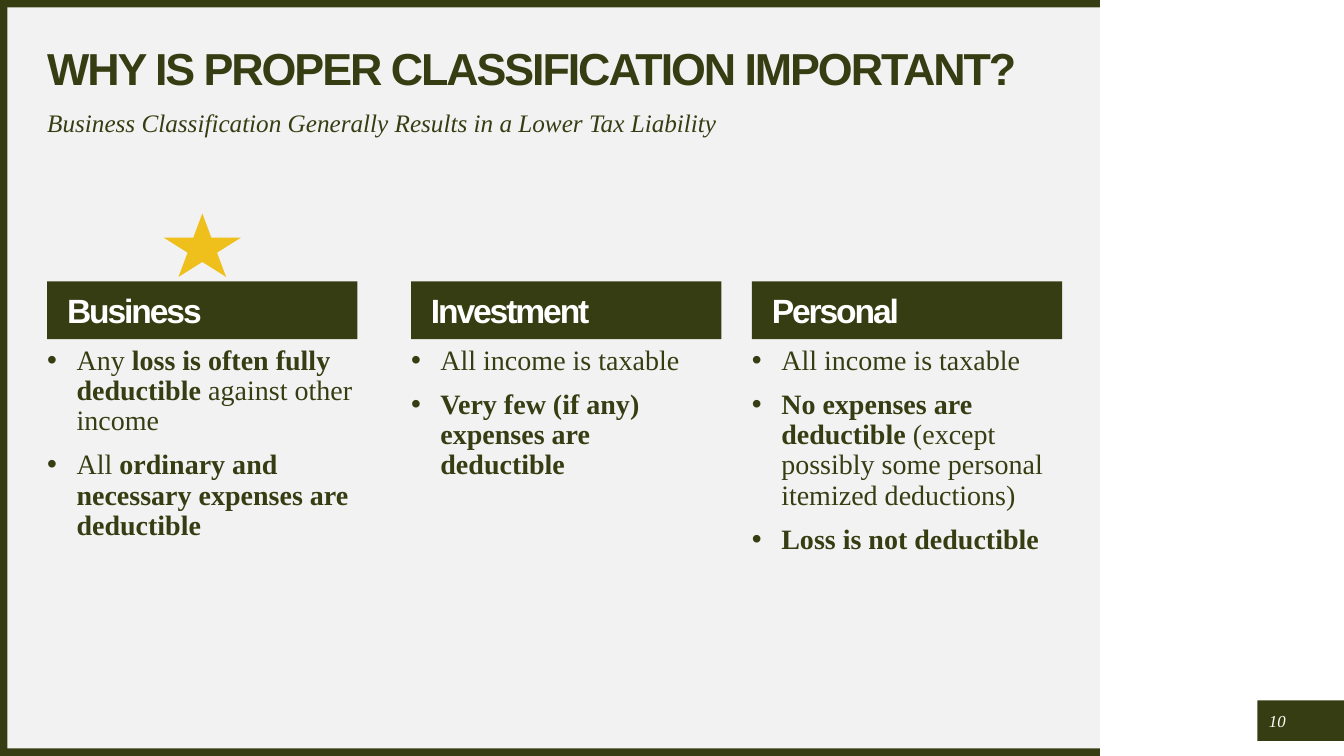
from lxml import etree
from pptx import Presentation
from pptx.dml.color import RGBColor
from pptx.enum.shapes import MSO_SHAPE
from pptx.enum.text import MSO_ANCHOR, PP_ALIGN
from pptx.oxml.ns import qn
from pptx.util import Cm, Pt

RECT, STAR = MSO_SHAPE.RECTANGLE, MSO_SHAPE.STAR_5_POINT
TOP, MIDDLE = MSO_ANCHOR.TOP, MSO_ANCHOR.MIDDLE
LEFT, CENTER = PP_ALIGN.LEFT, PP_ALIGN.CENTER
OLIVE, PANEL, GOLD, WHITE = "373D12", "F2F2F2", "EFBF1B", "FFFFFF"
SANS, SERIF = "Arial", "Times New Roman"
SLIDE_W, SLIDE_H = 33.87, 19.05
PANEL_W, EDGE = 27.72, 0.19
MARGIN, COLUMN_W = 1.19, 7.82

COLUMNS = [
    (MARGIN, "Business", [
        [("Any ", False), ("loss is often fully deductible ", True),
         ("against other income", False)],
        [("All ", False),
         ("ordinary and necessary expenses are deductible", True)],
    ]),
    (10.36, "Investment", [
        [("All income is taxable", False)],
        [("Very few (if any) expenses are deductible", True)],
    ]),
    (18.95, "Personal", [
        [("All income is taxable", False)],
        [("No expenses are deductible ", True),
         ("(except possibly some personal itemized deductions)", False)],
        [("Loss is not deductible", True)],
    ]),
]


def rgb(color):
    """Turn a hex string into a colour."""
    return RGBColor.from_string(color)


def add_block(s, kind, x, y, w, h, color):
    """Add a flat preset shape without an outline."""
    sp = s.shapes.add_shape(kind, Cm(x), Cm(y), Cm(w), Cm(h))
    sp.shadow.inherit = False
    sp.fill.solid()
    sp.fill.fore_color.rgb = rgb(color)
    sp.line.fill.background()
    return sp


def add_text(s, x, y, w, h):
    """Add an empty text box."""
    return s.shapes.add_textbox(Cm(x), Cm(y), Cm(w), Cm(h))


def set_frame(sp, anchor=TOP, left=0, top=0):
    """Set the insets and anchor of a shape's text."""
    tf = sp.text_frame
    tf.word_wrap = True
    tf.vertical_anchor = anchor
    tf.margin_left, tf.margin_top = Cm(left), Cm(top)
    tf.margin_right = tf.margin_bottom = 0
    return tf


def add_run(p, text, size, font, color, bold=False, italic=False, spacing=0):
    """Append a formatted run to a paragraph."""
    r = p.add_run()
    r.text = text
    r.font.size, r.font.name = Pt(size), font
    r.font.bold, r.font.italic = bold, italic
    r.font.color.rgb = rgb(color)
    if spacing:
        r.font._element.set("spc", str(int(spacing * 100)))


def add_line(tf, text, size, font, color, align=LEFT, line_spacing=0.9, **style):
    """Fill the first paragraph of a frame with one run."""
    p = tf.paragraphs[0]
    p.alignment = align
    p.line_spacing = line_spacing
    add_run(p, text, size, font, color, **style)


def add_bullet(p):
    """Give a paragraph a hanging round bullet."""
    pPr = p._p.get_or_add_pPr()
    indent = Cm(0.74)
    pPr.set("marL", str(indent))
    pPr.set("indent", str(-indent))
    etree.SubElement(pPr, qn("a:buFont")).set("typeface", SANS)
    etree.SubElement(pPr, qn("a:buChar")).set("char", "•")


def add_background(s):
    """Draw the grey panel and its olive edges."""
    add_block(s, RECT, EDGE, EDGE, PANEL_W - EDGE, SLIDE_H - 2 * EDGE, PANEL)
    for y in (0, SLIDE_H - EDGE):
        add_block(s, RECT, 0, y, PANEL_W, EDGE, OLIVE)
    add_block(s, RECT, 0, 0, EDGE, SLIDE_H, OLIVE)


def add_heading(s, x, y, w):
    """Place the title and the subtitle below it."""
    tf = set_frame(add_text(s, x, y, w, 1.19), MIDDLE)
    add_line(tf, "WHY IS PROPER CLASSIFICATION IMPORTANT?", 32, SANS, OLIVE,
             bold=True, spacing=-1.5)
    tf = set_frame(add_text(s, x, y + 1.6, w, 1))
    add_line(tf, "Business Classification Generally Results in a Lower Tax Liability",
             18, SERIF, OLIVE, italic=True)


def add_column(s, x, y, w, name, points):
    """Place a header band with its bullet list."""
    band = add_block(s, RECT, x, y, w, 1.46, OLIVE)
    tf = set_frame(band, MIDDLE, left=0.5, top=0.1)
    add_line(tf, name, 24, SANS, WHITE, bold=True, spacing=-1.5)
    tf = set_frame(add_text(s, x, y + 1.63, w, 8.5))
    for i, point in enumerate(points):
        p = tf.add_paragraph() if i else tf.paragraphs[0]
        p.line_spacing = 0.9
        if i:
            p.space_before = Pt(10)
        add_bullet(p)
        for text, bold in point:
            add_run(p, text, 20, SERIF, OLIVE, bold=bold)


def add_page_number(s, x, y, w, h):
    """Place the page number on its olive tab."""
    add_block(s, RECT, x, y, w, h, OLIVE)
    tf = set_frame(add_text(s, x + 0.12, y + 0.13, 0.76, 0.76), MIDDLE)
    add_line(tf, "10", 12, SERIF, WHITE, CENTER, 1.0, italic=True)


def main():
    """Build and save the slide."""
    prs = Presentation()
    prs.slide_width, prs.slide_height = Cm(SLIDE_W), Cm(SLIDE_H)
    s = prs.slides.add_slide(prs.slide_layouts[6])
    add_background(s)
    add_heading(s, MARGIN, 1.19, 25.55)
    for x, name, points in COLUMNS:
        add_column(s, x, 7.09, COLUMN_W, name, points)
    add_block(s, STAR, MARGIN + (COLUMN_W - 1.94) / 2, 5.38, 1.94, 1.6, GOLD)
    add_page_number(s, SLIDE_W - 2.18, 17.65, 2.18, 1.02)
    prs.save("out.pptx")


if __name__ == "__main__":
    main()
